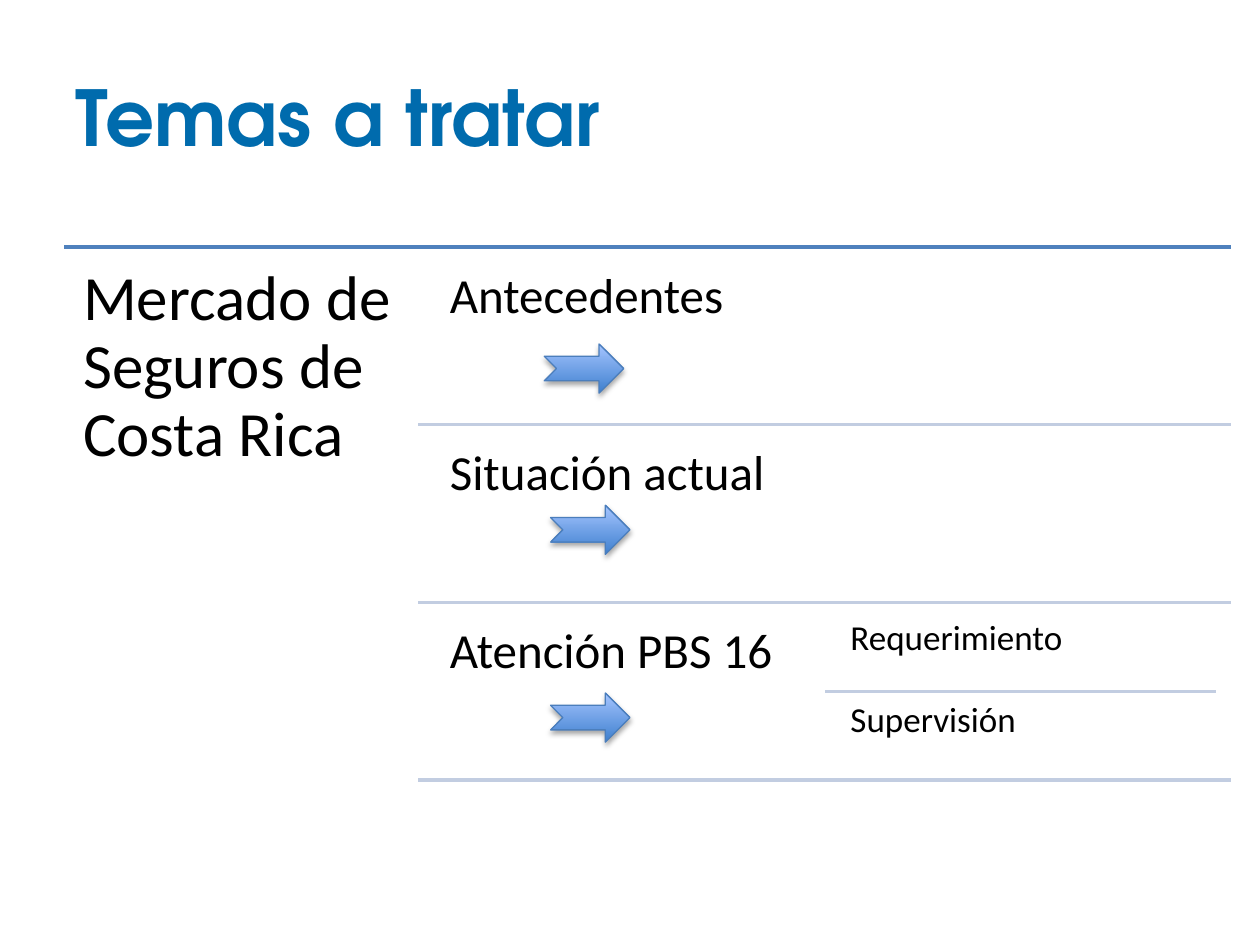
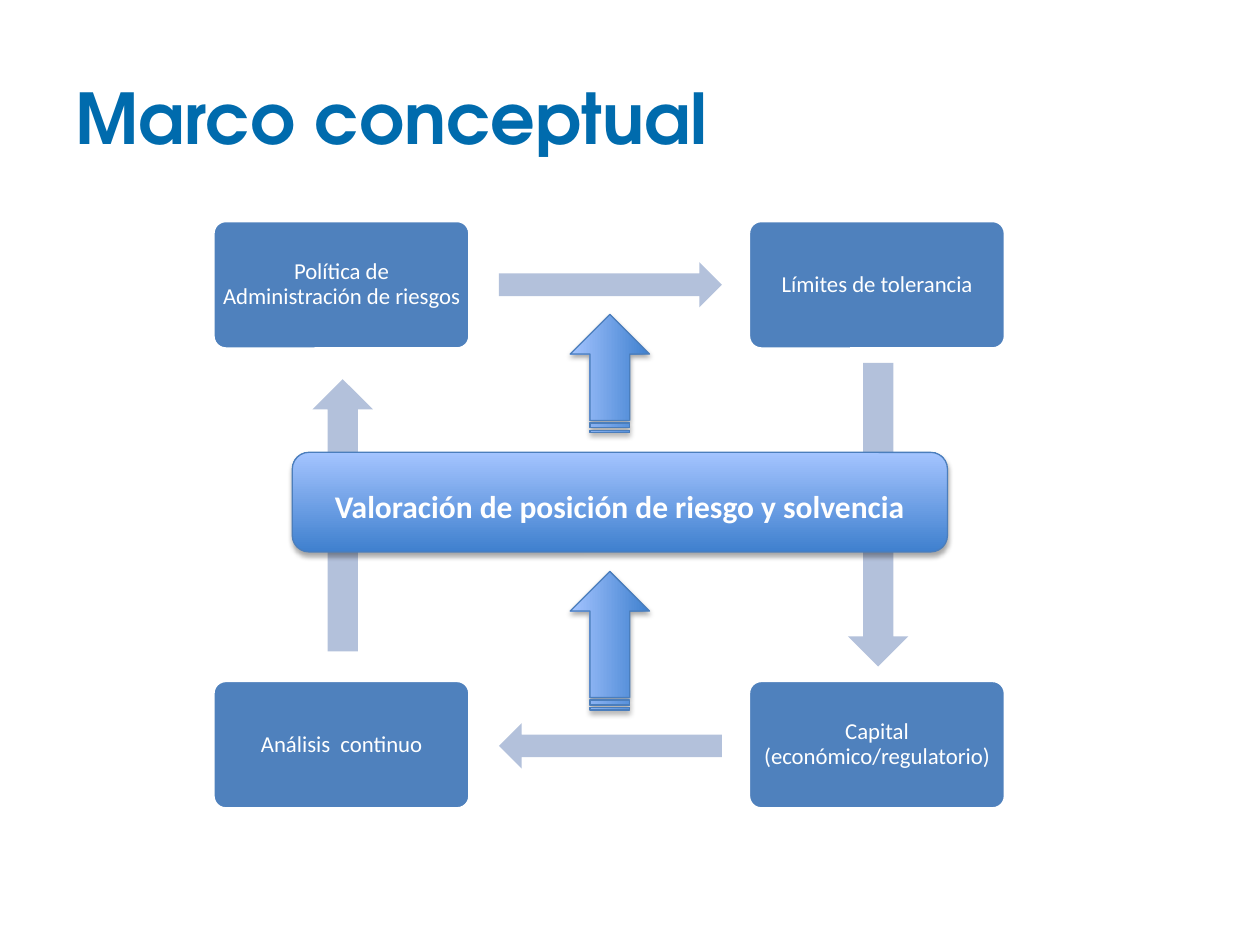
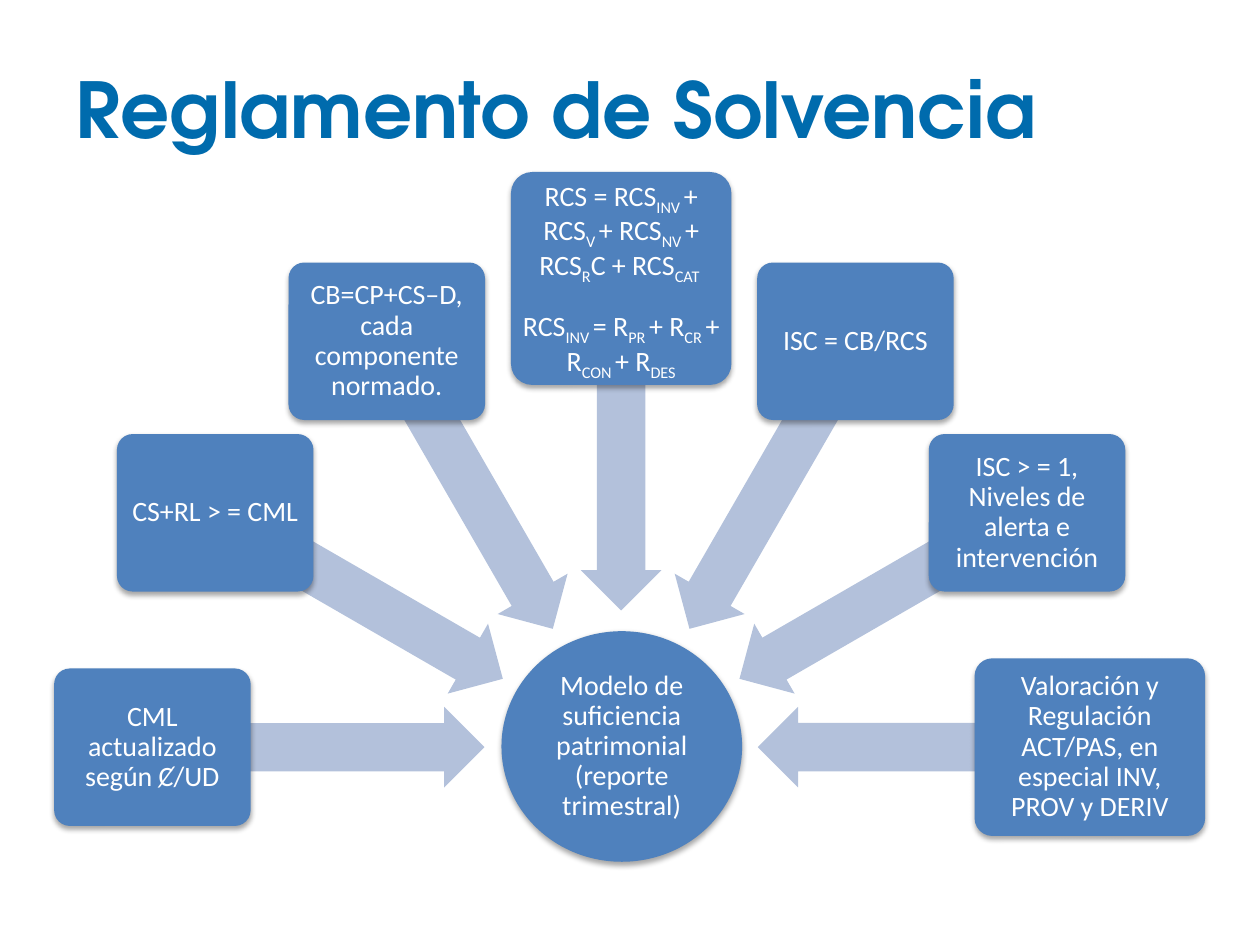
import math
from dataclasses import dataclass

from lxml import etree
from pptx import Presentation
from pptx.dml.color import RGBColor
from pptx.enum.shapes import MSO_CONNECTOR, MSO_SHAPE
from pptx.enum.text import MSO_ANCHOR, MSO_AUTO_SIZE, PP_ALIGN
from pptx.oxml.ns import qn
from pptx.util import Inches, Pt

STRAIGHT = MSO_CONNECTOR.STRAIGHT
ROUNDED, ELLIPSE = MSO_SHAPE.ROUNDED_RECTANGLE, MSO_SHAPE.OVAL
LEFT_ARROW, RIGHT_ARROW = MSO_SHAPE.LEFT_ARROW, MSO_SHAPE.RIGHT_ARROW
UP_ARROW, DOWN_ARROW = MSO_SHAPE.UP_ARROW, MSO_SHAPE.DOWN_ARROW
NOTCHED, STRIPED = MSO_SHAPE.NOTCHED_RIGHT_ARROW, MSO_SHAPE.STRIPED_RIGHT_ARROW
LEFT, CENTER = PP_ALIGN.LEFT, PP_ALIGN.CENTER
TOP, MIDDLE = MSO_ANCHOR.TOP, MSO_ANCHOR.MIDDLE

TITLE_FONT, BODY_FONT = "TeX Gyre Adventor", "Calibri"
TITLE_BLUE, BLUE, PALE_BLUE, RULE_BLUE = "006BAD", "4F81BD", "B3C1DB", "C2CDE1"
GLOSS_DARK, GLOSS_LIGHT, GLOSS_EDGE = "3F80CE", "A4C4FF", "4B7EBC"
WHITE, BLACK = "FFFFFF", "000000"
TITLE_ONLY = 5

Box = tuple[float, float, float, float]


@dataclass
class TextStyle:
    size: float
    inset: float
    color: str = WHITE
    align: PP_ALIGN = CENTER
    anchor: MSO_ANCHOR = MIDDLE
    bold: bool = False
    gap: float = 0


@dataclass
class Look:
    fill: str = BLUE
    edge: str | None = None
    edge_width: float = 2
    gloss: bool = False
    shadow: bool = False


@dataclass
class Spoke:
    text: str
    width: float = 1.56
    height: float = 1.25


GLOSSY = Look(edge=GLOSS_EDGE, edge_width=0.75, gloss=True, shadow=True)
OUTLINED, RAISED, FLOW = Look(edge=WHITE), Look(shadow=True), Look(fill=PALE_BLUE)

HEADING = TextStyle(36, 0.15, BLACK, LEFT, TOP)
TOPIC = TextStyle(28, 0.12, BLACK, LEFT, TOP)
SUBTOPIC = TextStyle(20, 0.08, BLACK, LEFT, TOP)
STEP = TextStyle(13, 0.05)
BANNER = TextStyle(18, 0.05, bold=True)
SPOKE = TextStyle(16, 0.03, gap=15.5)
HUB = TextStyle(16, 0.01)


def rgb(color: str) -> RGBColor:
    return RGBColor.from_string(color)


def apply(target, values: dict) -> None:
    for name, value in values.items():
        setattr(target, name, value)


def write(tf, text: str, style: TextStyle) -> None:
    """Write one paragraph per line; text in braces is subscript."""
    margin = Inches(style.inset)
    apply(tf, dict(word_wrap=True, vertical_anchor=style.anchor, margin_left=margin,
                   margin_right=margin, margin_top=margin, margin_bottom=margin))
    for i, line in enumerate(text.split("\n")):
        p = tf.add_paragraph() if i else tf.paragraphs[0]
        apply(p, dict(alignment=style.align, line_spacing=0.9))
        if i:
            p.space_before = Pt(style.gap)
        for j, part in enumerate(line.replace("}", "{").split("{")):
            if not part:
                continue
            r = p.add_run()
            r.text = part
            apply(r.font, dict(name=BODY_FONT, size=Pt(style.size), bold=style.bold))
            r.font.color.rgb = rgb(style.color)
            if j % 2:
                r._r.get_or_add_rPr().set("baseline", "-25000")


def add_soft_shadow(sp) -> None:
    effects = sp._element.spPr.find(qn("a:effectLst"))
    shadow = etree.SubElement(effects, qn("a:outerShdw"), blurRad=str(Pt(3.1)),
                              dist=str(Pt(1.8)), dir="5400000", rotWithShape="0")
    color = etree.SubElement(shadow, qn("a:srgbClr"), val=BLACK)
    etree.SubElement(color, qn("a:alpha"), val="35000")


def add_block(slide, kind: MSO_SHAPE, box: Box, look: Look, text: str = "",
              style: TextStyle = STEP, adjust: tuple = (), rotation: float = 0):
    sp = slide.shapes.add_shape(kind, *map(Inches, box))
    sp.rotation = rotation
    for i, value in enumerate(adjust):
        sp.adjustments[i] = value
    if look.gloss:
        sp.fill.gradient()
        sp.fill.gradient_angle = 90
        for stop, color in zip(sp.fill.gradient_stops, (GLOSS_DARK, GLOSS_LIGHT)):
            stop.color.rgb = rgb(color)
    else:
        sp.fill.solid()
        sp.fill.fore_color.rgb = rgb(look.fill)
    if look.edge:
        sp.line.color.rgb = rgb(look.edge)
        sp.line.width = Pt(look.edge_width)
    else:
        sp.line.fill.background()
    sp.shadow.inherit = False
    if look.shadow:
        add_soft_shadow(sp)
    if text:
        write(sp.text_frame, text, style)
    return sp


def add_text(slide, box: Box, text: str, style: TextStyle) -> None:
    write(slide.shapes.add_textbox(*map(Inches, box)).text_frame, text, style)


def add_rule(slide, left: float, right: float, y: float, color: str = RULE_BLUE) -> None:
    line = slide.shapes.add_connector(STRAIGHT, *map(Inches, (left, y, right, y)))
    line.line.color.rgb = rgb(color)
    line.line.width = Pt(2)
    etree.SubElement(line._element.spPr, qn("a:effectLst"))


def add_slide(prs, title: str, top: float, height: float = 1.25, size: float = 44):
    slide = prs.slides.add_slide(prs.slide_layouts[TITLE_ONLY])
    sp = slide.shapes.title
    apply(sp, dict(left=Inches(0.5), top=Inches(top), width=Inches(9), height=Inches(height)))
    tf = sp.text_frame
    apply(tf, dict(text=title, auto_size=MSO_AUTO_SIZE.NONE, vertical_anchor=MIDDLE))
    p = tf.paragraphs[0]
    p.alignment = LEFT
    font = p.runs[0].font
    apply(font, dict(name=TITLE_FONT, size=Pt(size), bold=True))
    font.color.rgb = rgb(TITLE_BLUE)
    return slide


def build_topics(prs) -> None:
    slide = add_slide(prs, "Temas a tratar", 0.29)
    top, pitch, right = 1.96, 1.41, 9.77
    add_rule(slide, 0.51, right, top, BLUE)
    add_text(slide, (0.51, top, 2.81, 4.29), "Mercado de Seguros de Costa Rica", HEADING)
    for i, topic in enumerate(("Antecedentes", "Situación actual", "Atención PBS 16")):
        y = top + i * pitch
        add_text(slide, (3.45, y + 0.07, 3.1, 1.34), topic, TOPIC)
        add_rule(slide, 3.32, right, y + pitch)
    for y, subtopic in ((4.84, "Requerimiento"), (5.49, "Supervisión")):
        add_text(slide, (6.67, y, 3.1, 0.65), subtopic, SUBTOPIC)
    add_rule(slide, 6.55, 9.65, 5.49)
    for x, y in ((4.32, 2.73), (4.37, 4.01), (4.37, 5.5)):
        add_block(slide, NOTCHED, (x, y, 0.63, 0.39), GLOSSY)


def build_framework(prs) -> None:
    slide = add_slide(prs, "Marco conceptual", 0.3, size=40)
    left, right, top, bottom = 1.69, 5.94, 1.75, 5.4
    steps = (
        (left, top, "Política de Administración de riesgos"),
        (right, top, "Límites de tolerancia"),
        (right, bottom, "Capital (económico/regulatorio)"),
        (left, bottom, "Análisis  continuo"),
    )
    for x, y, text in steps:
        add_block(slide, ROUNDED, (x, y, 2.04, 1.02), OUTLINED, text, adjust=(0.1,))
    flows = (
        (RIGHT_ARROW, (3.96, 2.08, 1.77, 0.36)),
        (DOWN_ARROW, (6.73, 2.88, 0.48, 2.41)),
        (LEFT_ARROW, (3.96, 5.74, 1.77, 0.36)),
        (UP_ARROW, (2.48, 3.01, 0.48, 2.16)),
    )
    for kind, box in flows:
        add_block(slide, kind, box, FLOW)
    banner = add_block(slide, ROUNDED, (2.32, 3.59, 5.2, 0.79), GLOSSY,
                       "Valoración de posición de riesgo y solvencia", BANNER)
    banner.text_frame.margin_top = Inches(0.14)
    for box in ((4.37, 2.65, 0.94, 0.63), (4.29, 4.77, 1.1, 0.63)):
        add_block(slide, STRIPED, box, GLOSSY, rotation=270)


def build_solvency(prs) -> None:
    slide = add_slide(prs, "Reglamento de Solvencia", 0.13, 1.45)
    hub_x, hub_y = 4.93, 5.93
    box_radius, arrow_radius, arrow_length, arrow_width = 3.72, 2.4, 2.63, 0.64
    spokes = (
        Spoke("CML actualizado según Ȼ/UD"),
        Spoke("CS+RL > = CML"),
        Spoke("CB=CP+CS–D, cada componente normado."),
        Spoke("RCS = RCS{INV }+ RCS{V }+ RCS{NV }+ RCS{R}C + RCS{CAT }\n"
              "RCS{INV }= R{PR }+ R{CR }+ R{CON }+ R{DES}", 1.75, 1.69),
        Spoke("ISC = CB/RCS"),
        Spoke("ISC > = 1, Niveles de alerta e intervención"),
        Spoke("Valoración y Regulación ACT/PAS, en especial INV, PROV y DERIV", 1.83, 1.41),
    )

    def around_hub(angle: float, radius: float, width: float, height: float) -> Box:
        x = hub_x + radius * math.cos(math.radians(angle))
        y = hub_y + radius * math.sin(math.radians(angle))
        return x - width / 2, y - height / 2, width, height

    add_block(slide, ELLIPSE, (3.98, 5.01, 1.91, 1.83), RAISED,
              "Modelo de suficiencia patrimonial (reporte trimestral)", HUB)
    for i, spoke in enumerate(spokes):
        angle = 180 + 30 * i
        add_block(slide, LEFT_ARROW, around_hub(angle, arrow_radius, arrow_length, arrow_width),
                  FLOW, adjust=(0.6, 0.5), rotation=angle % 360)
        add_block(slide, ROUNDED, around_hub(angle, box_radius, spoke.width, spoke.height),
                  RAISED, spoke.text, SPOKE, adjust=(0.1,))


def main() -> None:
    prs = Presentation()
    prs.slide_width, prs.slide_height = Inches(10), Inches(7.5)
    for build in (build_topics, build_framework, build_solvency):
        build(prs)
    prs.save("out.pptx")


if __name__ == "__main__":
    main()
